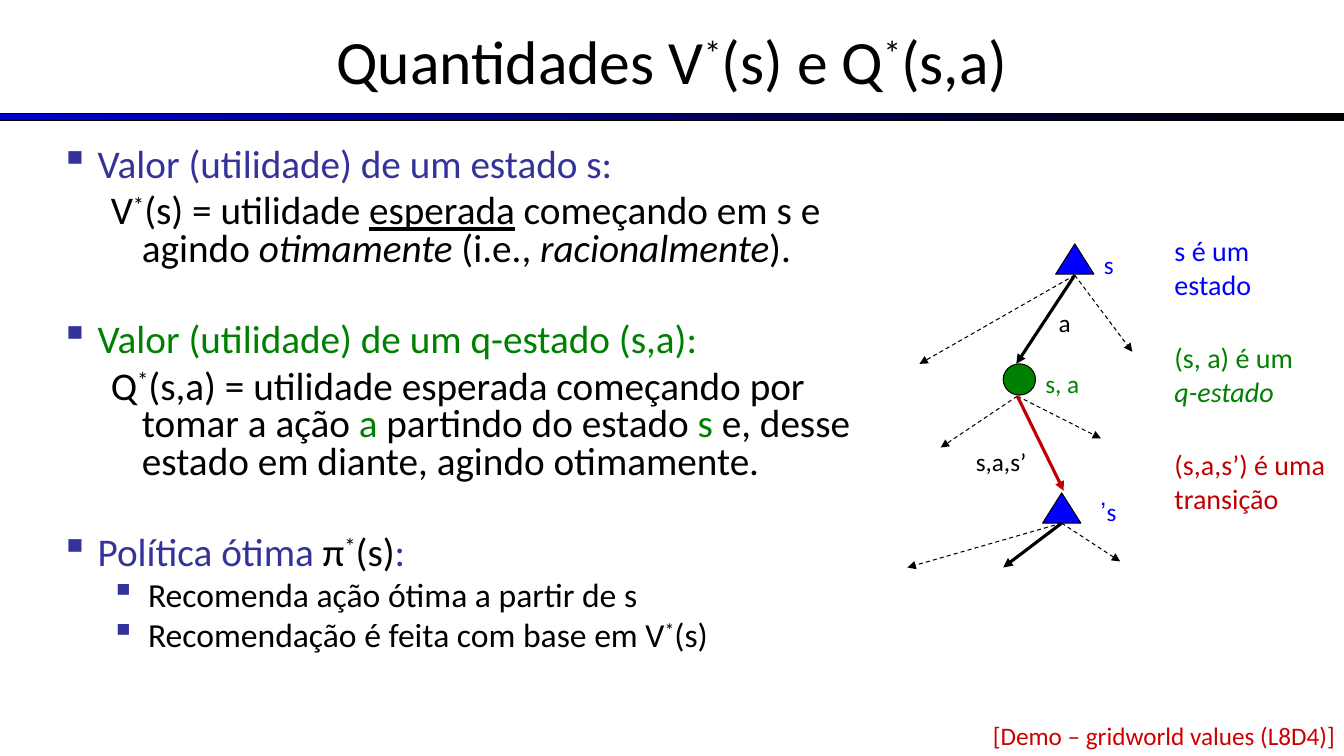
from lxml import etree
from pptx import Presentation
from pptx.dml.color import RGBColor
from pptx.enum.dml import MSO_LINE
from pptx.enum.shapes import MSO_CONNECTOR, MSO_SHAPE
from pptx.enum.text import MSO_ANCHOR, MSO_AUTO_SIZE, PP_ALIGN
from pptx.oxml.ns import qn
from pptx.util import Inches, Pt

RECT, TRI, OVAL = MSO_SHAPE.RECTANGLE, MSO_SHAPE.ISOSCELES_TRIANGLE, MSO_SHAPE.OVAL
STRAIGHT, DASH = MSO_CONNECTOR.STRAIGHT, MSO_LINE.DASH
LEFT, CENTER, RIGHT = PP_ALIGN.LEFT, PP_ALIGN.CENTER, PP_ALIGN.RIGHT
MIDDLE, FIXED = MSO_ANCHOR.MIDDLE, MSO_AUTO_SIZE.NONE
BLACK, BLUE, GREEN, RED, NAVY = "000000", "0000FF", "008000", "C00000", "333399"


def color(text):
    return RGBColor.from_string(text)


def apply(item, values):
    for key, value in values.items():
        setattr(item, key, value)


def write(para, runs, size, tint):
    for text, style in runs:
        run = para.add_run()
        run.text = text
        values = {"name": "Calibri", "size": Pt(size), **style}
        hue = values.pop("hue", tint)
        apply(run.font, values)
        run.font.color.rgb = color(hue)
        if text == "*":
            run._r.get_or_add_rPr().set("baseline", "30000")


def bullet(para):
    props = para._p.get_or_add_pPr()
    tint = etree.SubElement(props, qn("a:buClr"))
    etree.SubElement(tint, qn("a:srgbClr"), val=NAVY)
    etree.SubElement(props, qn("a:buChar"), char="▪")


def shape(slide, kind, box, fill):
    item = slide.shapes.add_shape(kind, *map(Inches, box))
    item.shadow.inherit = False
    item.line.color.rgb = color(BLACK)
    item.line.width = Pt(0.75)
    if fill:
        item.fill.solid()
        item.fill.fore_color.rgb = color(fill)
    return item


def arrow(slide, start, end, tint=None):
    line = slide.shapes.add_connector(STRAIGHT, *map(Inches, (*start, *end)))
    line.line.color.rgb = color(tint or BLACK)
    line.line.width = Pt(2.25 if tint else 0.75)
    if not tint:
        line.line.dash_style = DASH
    etree.SubElement(line.line._get_or_add_ln(), qn("a:tailEnd"), type="triangle")
    etree.SubElement(line._element.spPr, qn("a:effectLst"))


def label(slide, box, runs, size, tint, align=LEFT):
    frame = slide.shapes.add_textbox(*map(Inches, box)).text_frame
    frame.word_wrap = True
    para = frame.paragraphs[0]
    para.alignment = align
    write(para, runs, size, tint)
    return para


def header(slide, box):
    left, top, width, height = box
    title = slide.shapes.title
    apply(title, dict(zip(("left", "top", "width", "height"), map(Inches, box))))
    frame = title.text_frame
    apply(frame, {"vertical_anchor": MIDDLE, "auto_size": FIXED, "word_wrap": True})
    para = frame.paragraphs[0]
    para.alignment = CENTER
    parts = ("Quantidades V", "*", "(s) e Q", "*", "(s,a)")
    write(para, [(part, {}) for part in parts], 44, BLACK)
    bar = shape(slide, RECT, (left, top + 1.16, width, 0.07), None)
    bar.fill.gradient()
    bar.fill.gradient_angle = 0
    for stop, tint, place in zip(bar.fill.gradient_stops, ("0000CC", BLACK), (0, 1)):
        stop.color.rgb = color(tint)
        stop.position = place


def body(slide, box):
    kinds = {
        "head": (0, 0.37, -0.37, 28, 38, NAVY),
        "text": (1, 0.81, -0.31, 28, 6.5, BLACK),
        "item": (1, 0.87, -0.37, 24, 5.5, BLACK),
    }
    green, black, slant = {"hue": GREEN}, {"hue": BLACK}, {"italic": True}
    rows = [
        ("head", [("Valor (utilidade) de um estado s:", {})]),
        ("text", [("V", {}), ("*", {}), ("(s) = utilidade ", {}),
                  ("esperada", {"underline": True}), (" começando em s e agindo ", {}),
                  ("otimamente", slant), (" (i.e., ", {}),
                  ("racionalmente", slant), (").", {})]),
        ("head", [("Valor (utilidade) de um q-estado (s,a):", green)]),
        ("text", [("Q", {}), ("*", {}),
                  ("(s,a) = utilidade esperada começando por tomar a ação ", {}),
                  ("a ", green), ("partindo do estado ", {}), ("s", green),
                  (" e, desse estado em diante, agindo otimamente.", {})]),
        ("head", [("Política ótima ", {}), ("π", black), ("*", black),
                  ("(s)", black), (":", {})]),
        ("item", [("Recomenda ação ótima a partir de s", {})]),
        ("item", [("Recomendação é feita com base em V", {}), ("*", {}), ("(s)", {})]),
    ]
    frame = slide.shapes.add_textbox(*map(Inches, box)).text_frame
    frame.word_wrap = True
    for order, (kind, runs) in enumerate(rows):
        level, margin, indent, size, gap, tint = kinds[kind]
        para = frame.add_paragraph() if order else frame.paragraphs[0]
        apply(para, {"level": level, "line_spacing": 0.8,
                     "space_before": Pt(gap if order else 6.5)})
        props = para._p.get_or_add_pPr()
        props.set("marL", str(Inches(margin)))
        props.set("indent", str(Inches(indent)))
        if kind != "text":
            bullet(para)
        write(para, runs, size, tint)


def tree(slide, box):
    left, top = box[:2]
    nodes = [(TRI, 1.47, 0, 0.38, 0.3, BLUE), (TRI, 1.34, 2.47, 0.38, 0.3, BLUE),
             (OVAL, 0.95, 1.19, 0.32, 0.31, GREEN)]
    for kind, x, y, width, height, tint in nodes:
        shape(slide, kind, (left + x, top + y, width, height), tint)
    fans = [
        ((1.66, 0.31), [(0.12, 1.19, None), (1.08, 1.19, BLACK), (2.23, 1.07, None)]),
        ((1.09, 1.51), [(0.33, 2.02, None), (1.92, 1.93, None), (1.55, 2.45, RED)]),
        ((1.53, 2.77), [(0, 3.21, None), (0.95, 3.21, BLACK), (2.11, 3.15, None)]),
    ]
    for (x, y), ends in fans:
        for far, low, tint in ends:
            arrow(slide, (left + x, top + y), (left + far, top + low), tint)
    names = [("a", 1.4, 0.58, 0.32, BLACK), ("s", 1.85, 0, 0.32, BLUE),
             ("s, a", 1.27, 1.19, 0.64, GREEN), ("s,a,s’", 0.58, 1.96, 0.9, BLACK)]
    for text, x, y, width, tint in names:
        label(slide, (left + x, top + y, width, 0.4), [(text, {})], 18, tint)
    spot = (left + 1.75, top + 2.45, 0.42, 0.4)
    para = label(slide, spot, [("s’", {})], 18, BLUE, RIGHT)
    para._p.get_or_add_pPr().set("rtl", "1")


def legend(slide, box):
    left, top = box[:2]
    notes = [
        (1.15, BLUE, [("s é um estado", {})]),
        (1.42, GREEN, [("(s, a) é um ", {}), ("q-estado", {"italic": True})]),
        (1.7, RED, [("(s,a,s’) é uma transição", {})]),
    ]
    for order, (width, tint, runs) in enumerate(notes):
        label(slide, (left, top + order * 1.06, width, 0.77), runs, 20, tint)


def footer(slide, box):
    label(slide, box, [("[Demo – gridworld values (L8D4)]", {})], 18, "CC0000", RIGHT)


def main():
    deck = Presentation()
    deck.slide_width, deck.slide_height = Inches(13.33), Inches(7.5)
    slide = deck.slides.add_slide(deck.slide_layouts[5])
    header(slide, (0, -0.03, 13.33, 1.25))
    body(slide, (0.5, 1.42, 8.42, 5.42))
    tree(slide, (9, 2.42, 2.23, 3.21))
    legend(slide, (11.55, 2.27, 1.7, 2.89))
    footer(slide, (6.42, 7.1, 6.92, 0.4))
    deck.save("out.pptx")


if __name__ == "__main__":
    main()
